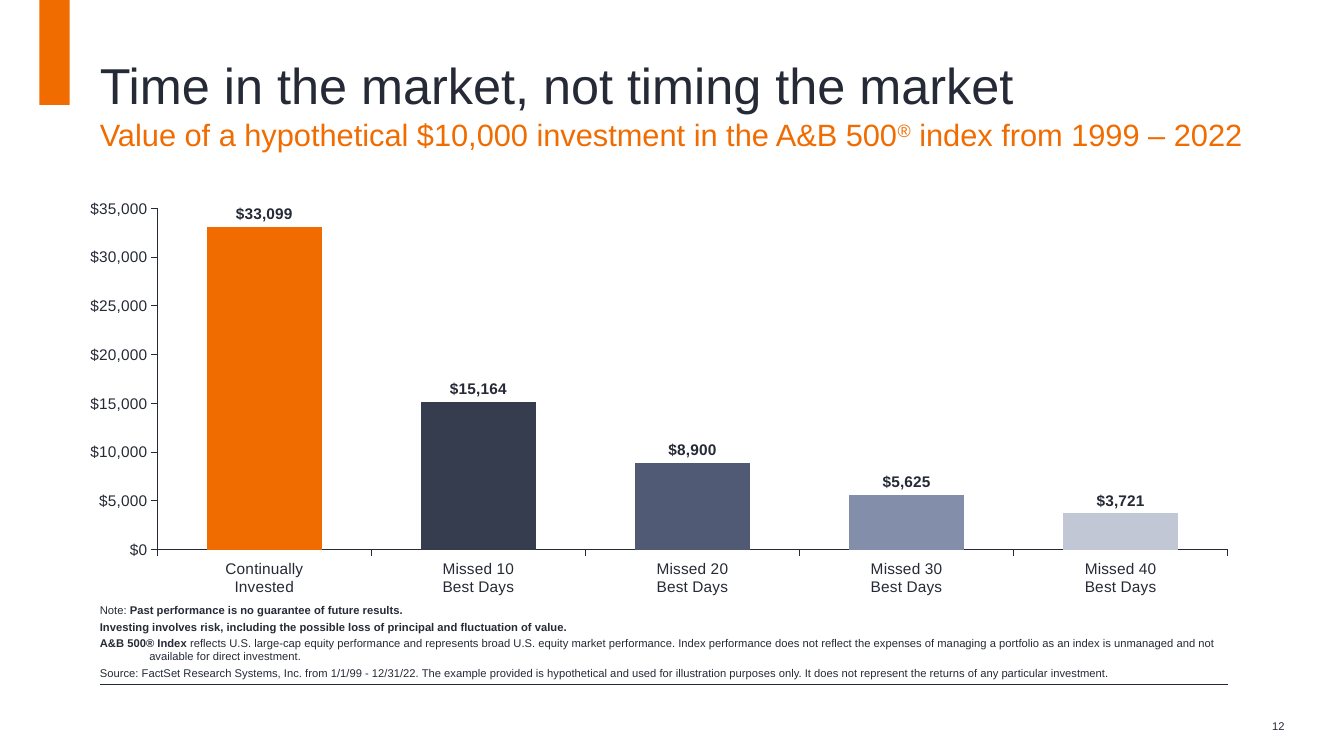
import pptx
import pptx.chart.data
import pptx.dml.color
import pptx.enum.chart
import pptx.enum.shapes
import pptx.enum.text
import pptx.oxml
import pptx.oxml.ns
import pptx.util
from dataclasses import dataclass

Inches = pptx.util.Inches
Pt = pptx.util.Pt
Anchor = pptx.enum.text.MSO_ANCHOR
Align = pptx.enum.text.PP_ALIGN
Tick = pptx.enum.chart.XL_TICK_MARK


@dataclass(frozen=True)
class Theme:
    font: str = "Arial"
    ink: str = "252A36"
    accent: str = "F06C00"
    bars: tuple = ("F06C00", "363D4F", "505A74", "838EAA", "C1C7D4")
    title: int = 36
    subtitle: int = 22
    chart: int = 11
    small: int = 8
    dollars: str = '"$"#,##0'


def rgb(code):
    return pptx.dml.color.RGBColor.from_string(code)


def inches(*lengths):
    return [Inches(length) for length in lengths]


class SlideBuilder:
    def __init__(self, slide, theme):
        self.slide = slide
        self.theme = theme

    def style_font(self, font, size, color=None, bold=False):
        font.name = self.theme.font
        font.size = Pt(size)
        font.bold = bold
        font.color.rgb = rgb(color or self.theme.ink)

    def block(self, box, color):
        rect = self.slide.shapes.add_shape(
            pptx.enum.shapes.MSO_SHAPE.RECTANGLE, *inches(*box))
        rect.shadow.inherit = False
        rect.fill.solid()
        rect.fill.fore_color.rgb = rgb(color)
        rect.line.fill.background()

    def rule(self, start, end):
        line = self.slide.shapes.add_connector(
            pptx.enum.shapes.MSO_CONNECTOR.STRAIGHT, *inches(*start, *end))
        line.line.color.rgb = rgb(self.theme.ink)
        line.line.width = Pt(0.5)
        line._element.spPr.append(pptx.oxml.parse_xml(
            f'<a:effectLst {pptx.oxml.ns.nsdecls("a")}/>'))

    def text(self, box, paragraphs, size, color=None, anchor=Anchor.TOP,
             align=Align.LEFT, bottom=0, hanging=0, after=0):
        """Each paragraph is a list of (text, mark) runs; mark is "", "bold" or "super"."""
        frame = self.slide.shapes.add_textbox(*inches(*box)).text_frame
        frame.word_wrap = True
        frame.vertical_anchor = anchor
        frame.margin_left = frame.margin_right = frame.margin_top = 0
        frame.margin_bottom = Inches(bottom)
        for index, runs in enumerate(paragraphs):
            paragraph = frame.add_paragraph() if index else frame.paragraphs[0]
            paragraph.alignment = align
            paragraph.space_after = Pt(after)
            if hanging:
                properties = paragraph._p.get_or_add_pPr()
                properties.set("marL", str(Inches(hanging)))
                properties.set("indent", str(-Inches(hanging)))
            for words, mark in runs:
                run = paragraph.add_run()
                run.text = words
                self.style_font(run.font, size, color, mark == "bold")
                if mark == "super":
                    run._r.get_or_add_rPr().set("baseline", "30000")

    def style_axis(self, axis):
        axis.has_major_gridlines = False
        axis.major_tick_mark = Tick.OUTSIDE
        axis.minor_tick_mark = Tick.NONE
        axis.format.line.color.rgb = rgb(self.theme.ink)
        axis.format.line.width = Pt(0.75)
        self.style_font(axis.tick_labels.font, self.theme.chart)

    def place_plot(self, chart, x, y, w, h):
        """Fix the inner plot area, in fractions of the chart."""
        plot_area = chart._chartSpace.chart.plotArea
        for layout in plot_area.findall(pptx.oxml.ns.qn("c:layout")):
            plot_area.remove(layout)
        sizes = "".join(f'<c:{tag} val="{value}"/>' for tag, value in
                        zip("xywh", (x, y, w, h)))
        plot_area.insert(0, pptx.oxml.parse_xml(
            f'<c:layout {pptx.oxml.ns.nsdecls("c")}><c:manualLayout>'
            '<c:layoutTarget val="inner"/><c:xMode val="edge"/>'
            f'<c:yMode val="edge"/>{sizes}</c:manualLayout></c:layout>'))

    def columns(self, box, values_by_category):
        theme = self.theme
        data = pptx.chart.data.CategoryChartData(number_format=theme.dollars)
        data.categories = list(values_by_category)
        data.add_series("Series 1", list(values_by_category.values()))
        chart = self.slide.shapes.add_chart(
            pptx.enum.chart.XL_CHART_TYPE.COLUMN_CLUSTERED,
            *inches(*box), data).chart
        chart.has_legend = False
        chart.has_title = False
        self.style_font(chart.font, theme.chart, bold=True)
        self.style_axis(chart.category_axis)
        self.style_axis(chart.value_axis)
        chart.value_axis.minimum_scale = 0
        chart.value_axis.maximum_scale = 35000
        chart.value_axis.major_unit = 5000
        chart.value_axis.tick_labels.number_format = theme.dollars
        chart.value_axis.tick_labels.number_format_is_linked = False

        plot = chart.plots[0]
        plot.vary_by_categories = False
        plot.gap_width = 86
        plot.overlap = -27
        series = plot.series[0]
        for index, color in enumerate(theme.bars):
            fill = series.points[index].format.fill
            fill.solid()
            fill.fore_color.rgb = rgb(color)
        labels = series.data_labels
        labels.show_value = True
        labels.position = pptx.enum.chart.XL_LABEL_POSITION.OUTSIDE_END
        labels.number_format = theme.dollars
        labels.number_format_is_linked = False
        self.style_font(labels.font, theme.chart, bold=True)
        self.place_plot(chart, 0.072, 0.024, 0.92, 0.832)


def main():
    presentation = pptx.Presentation()
    presentation.slide_width = Inches(13.33)
    presentation.slide_height = Inches(7.5)
    theme = Theme()
    page = SlideBuilder(
        presentation.slides.add_slide(presentation.slide_layouts[6]), theme)
    left, width = 0.99, 11.19

    page.text((12.23, 7, 0.51, 0.4), [[("12", "")]], theme.small,
              anchor=Anchor.MIDDLE, align=Align.RIGHT)
    page.block((0.39, 0, 0.3, 1.04), theme.accent)
    page.rule((left, 6.79), (left + width, 6.79))
    page.text((left, 0.43, width, 0.71),
              [[("Time in the market, not timing the market", "")]],
              theme.title, anchor=Anchor.BOTTOM)
    page.text((left, 1.15, 11.74, 0.39), [[
        ("Value of a hypothetical $10,000 investment in the A&B 500", ""),
        ("®", "super"),
        (" index from 1999 – 2022", ""),
    ]], theme.subtitle, theme.accent)

    notes = [
        [("Note: ", ""),
         ("Past performance is no guarantee of future results.", "bold")],
        [("Investing involves risk, including the possible loss of principal "
          "and fluctuation of value.", "bold")],
        [("A&B 500® Index ", "bold"),
         ("reflects U.S. large-cap equity performance and represents broad "
          "U.S. equity market performance. Index performance does not reflect "
          "the expenses of managing a portfolio as an index is unmanaged and "
          "not available for direct investment.", "")],
        [("Source: FactSet Research Systems, Inc. from 1/1/99 - 12/31/22. The "
          "example provided is hypothetical and used for illustration purposes "
          "only. It does not represent the returns of any particular "
          "investment.", "")],
    ]
    page.text((left, 6.35, width, 0.43), notes, theme.small,
              anchor=Anchor.BOTTOM, bottom=0.04, hanging=0.49, after=2)

    ending_values = {"Continually\nInvested": 33099}
    for days, value in zip((10, 20, 30, 40), (15164, 8900, 5625, 3721)):
        ending_values[f"Missed {days}\nBest Days"] = value
    page.columns((0.73, 1.97, 11.54, 4.07), ending_values)

    presentation.save("out.pptx")


if __name__ == "__main__":
    main()
